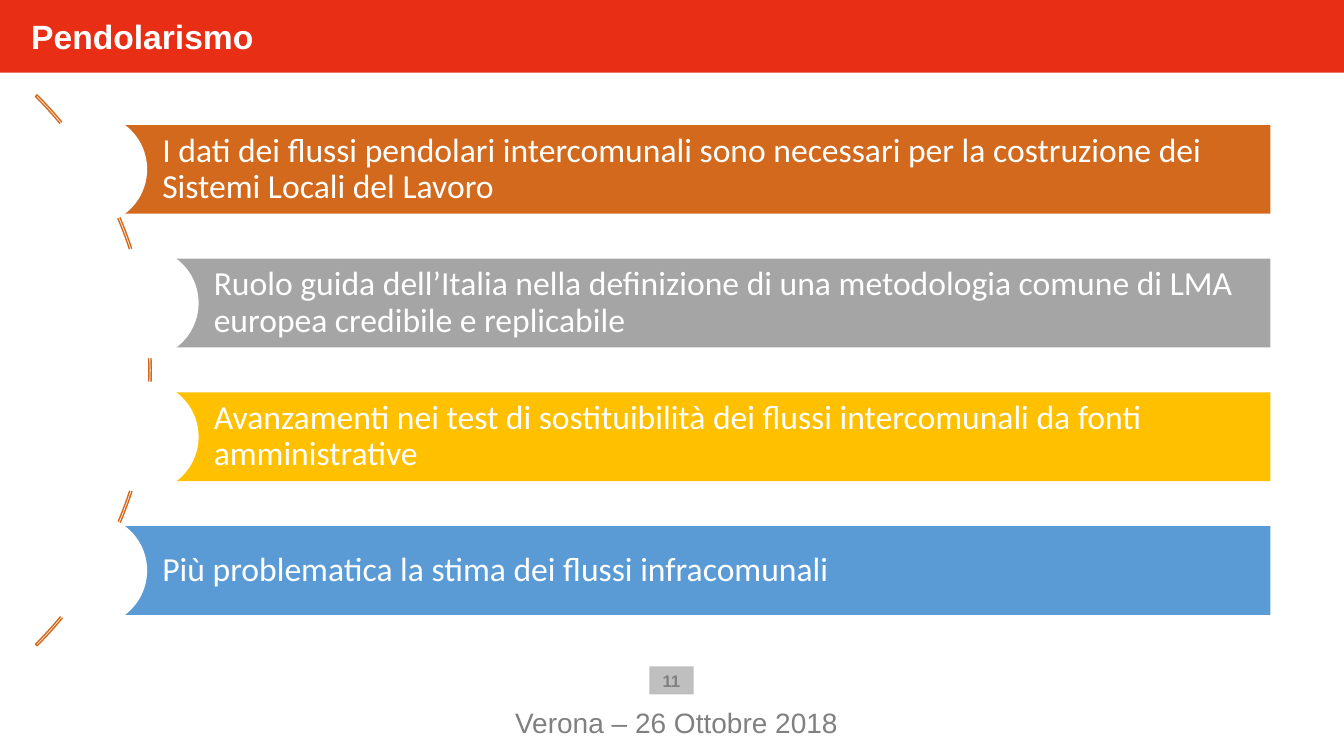
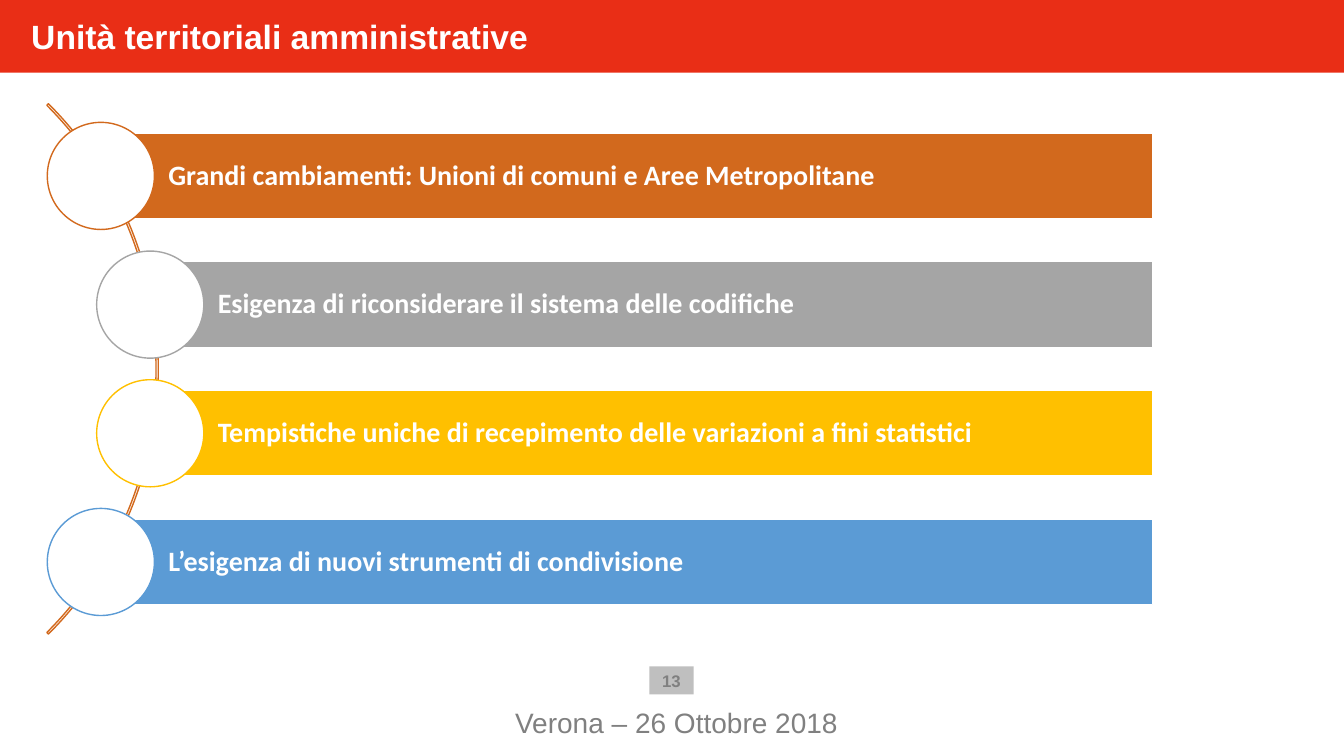
from pptx import Presentation
from pptx.dml.color import RGBColor
from pptx.enum.shapes import MSO_SHAPE
from pptx.enum.text import MSO_ANCHOR, MSO_AUTO_SIZE, PP_ALIGN
from pptx.util import Inches, Pt

RED, ORANGE, WHITE = "E92E16", "D2691D", "FFFFFF"
SILVER, GREY = "BFBFBF", "808080"
COLORS = [ORANGE, "A5A5A5", "FFC000", "5B9BD5"]


def paint(shape, fill=None, line=None):
    """Set fill and outline from hex strings; None means none."""
    shape.shadow.inherit = False
    if fill:
        shape.fill.solid()
        shape.fill.fore_color.rgb = RGBColor.from_string(fill)
    else:
        shape.fill.background()
    if line:
        shape.line.color.rgb = RGBColor.from_string(line)
        shape.line.width = Pt(1)
    else:
        shape.line.fill.background()


def write(shape, text, font, size, color, bold, align, anchor, insets):
    """Fill a shape with one run; insets are left, top, right, bottom."""
    frame = shape.text_frame
    frame.word_wrap = True
    frame.auto_size = MSO_AUTO_SIZE.NONE
    frame.vertical_anchor = anchor
    (frame.margin_left, frame.margin_top,
     frame.margin_right, frame.margin_bottom) = [Inches(n) for n in insets]
    par = frame.paragraphs[0]
    par.alignment = align
    run = par.add_run()
    run.text = text
    run.font.name = font
    run.font.size = Pt(size)
    run.font.bold = bold
    run.font.color.rgb = RGBColor.from_string(color)
    return par


# arc: left, top, size; lefts: outer and inner bars; tops: first and last bar
SLIDES = [
    {
        "title": "Pendolarismo", "number": "11",
        "arc": (-6.23, -0.19, 7.73), "lefts": (0.91, 1.42), "right": 12.6,
        "tops": (1.24, 5.22), "height": 0.88, "insets": (0.7, 0.07, 0.07, 0.07),
        "size": 24, "bold": False, "outline": False,
        "items": [
            "I dati dei flussi pendolari intercomunali sono necessari per la "
            "costruzione dei Sistemi Locali del Lavoro",
            "Ruolo guida dell’Italia nella definizione di una metodologia "
            "comune di LMA europea credibile e replicabile",
            "Avanzamenti nei test di sostituibilità dei flussi intercomunali "
            "da fonti amministrative",
            "Più problematica la stima dei flussi infracomunali",
        ],
    },
    {
        "title": "Unità territoriali amministrative", "number": "13",
        "arc": (-5.87, -0.06, 7.44), "lefts": (1, 1.49), "right": 11.43,
        "tops": (1.32, 5.15), "height": 0.85, "insets": (0.67, 0.06, 0.06, 0.06),
        "size": 20, "bold": True, "outline": True,
        "items": [
            "Grandi cambiamenti: Unioni di comuni e Aree Metropolitane",
            "Esigenza di riconsiderare il sistema delle codifiche",
            "Tempistiche uniche di recepimento delle variazioni a fini statistici",
            "L’esigenza di nuovi strumenti di condivisione",
        ],
    },
]

prs = Presentation()
prs.slide_width, prs.slide_height = Inches(13.33), Inches(7.5)

for data in SLIDES:
    slide = prs.slides.add_slide(prs.slide_layouts[5])
    shapes = slide.shapes

    # Title band
    title = shapes.title
    title.left, title.top = Inches(0), Inches(0)
    title.width, title.height = prs.slide_width, Inches(0.72)
    title.fill.solid()
    title.fill.fore_color.rgb = RGBColor.from_string(RED)
    write(title, data["title"], "Arial", 24, WHITE, True,
          PP_ALIGN.LEFT, MSO_ANCHOR.TOP, (0.31, 0.16, 0.31, 0.16))

    # Page number and footer
    number = shapes.add_shape(MSO_SHAPE.RECTANGLE, Inches(6.44), Inches(6.61),
                              Inches(0.44), Inches(0.28))
    paint(number, SILVER)
    write(number, data["number"], "Arial", 12, GREY, True,
          PP_ALIGN.CENTER, MSO_ANCHOR.MIDDLE, (0, 0, 0, 0))
    footer = shapes.add_textbox(Inches(3.95), Inches(6.97),
                                Inches(5.52), Inches(0.36))
    write(footer, "Verona – 26 Ottobre 2018", "Arial", 20, GREY, False,
          PP_ALIGN.CENTER, MSO_ANCHOR.BOTTOM, (0.1, 0.05, 0.1, 0))

    # Arc behind the bars
    left, top, side = [Inches(n) for n in data["arc"]]
    arc = shapes.add_shape(MSO_SHAPE.BLOCK_ARC, left, top, side, side)
    for i, value in enumerate((189, 27, 0.003)):
        arc.adjustments[i] = value
    paint(arc, line=ORANGE)

    # Bars, each with a circle centred on its left edge
    first, last = data["tops"]
    outer, inner = data["lefts"]
    high = data["height"]
    step = (last - first) / 3
    disc = 1.25 * high
    rows = zip(data["items"], COLORS, (outer, inner, inner, outer))
    for i, (text, color, left) in enumerate(rows):
        top = first + i * step
        bar = shapes.add_shape(MSO_SHAPE.RECTANGLE, Inches(left), Inches(top),
                               Inches(data["right"] - left), Inches(high))
        paint(bar, color, WHITE if data["outline"] else None)
        par = write(bar, text, "Calibri", data["size"], WHITE, data["bold"],
                    PP_ALIGN.LEFT, MSO_ANCHOR.MIDDLE, data["insets"])
        par.line_spacing = 0.9
        dot = shapes.add_shape(MSO_SHAPE.OVAL, Inches(left - disc / 2),
                               Inches(top + (high - disc) / 2),
                               Inches(disc), Inches(disc))
        paint(dot, WHITE, color if data["outline"] else None)

prs.save("out.pptx")
